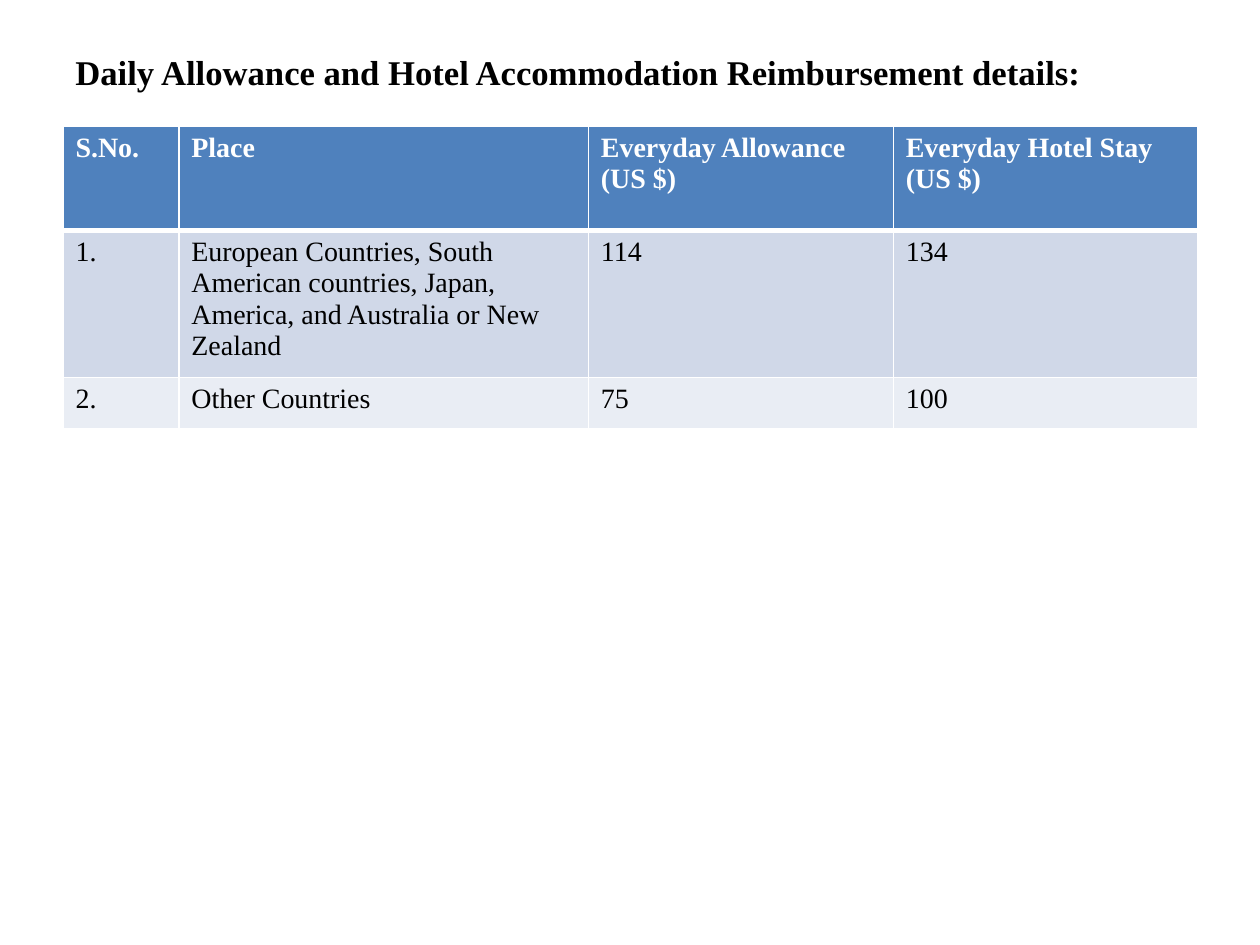
from lxml.etree import SubElement
from pptx import Presentation
from pptx.dml.color import RGBColor
from pptx.enum.text import MSO_ANCHOR
from pptx.oxml.ns import qn
from pptx.util import Inches, Pt

FONT = "Times New Roman"
WHITE, BLACK = "FFFFFF", "000000"
ROW_FILLS = ["4F81BD", "D0D8E8", "E9EDF4"]
COLUMN_WIDTHS = [0.92, 3.25, 2.42, 2.42]
ROW_HEIGHTS = [0.83, 1.08, 0.41]
ALLOWANCES = [
    ["S.No.", "Place", "Everyday Allowance (US $)", "Everyday Hotel Stay (US $)"],
    ["1.", "European Countries, South American countries, Japan, America, "
           "and Australia or New Zealand", "114", "134"],
    ["2.", "Other Countries", "75", "100"],
]


def color(value):
    return RGBColor.from_string(value)


def add_run(paragraph, text, size, text_color, bold):
    run = paragraph.add_run()
    run.text = text
    run.font.name = FONT
    run.font.size = Pt(size)
    run.font.bold = bold
    run.font.color.rgb = color(text_color)


def add_title(slide, text):
    title = slide.shapes.add_textbox(Inches(0.5), Inches(0.3), Inches(9), Inches(0.53))
    frame = title.text_frame
    frame.word_wrap = True
    frame.vertical_anchor = MSO_ANCHOR.MIDDLE
    add_run(frame.paragraphs[0], text, 19.8, BLACK, True)


def set_borders(cell, bottom_width):
    properties = cell._tc.get_or_add_tcPr()
    widths = {"a:lnL": 1, "a:lnR": 1, "a:lnT": 1, "a:lnB": bottom_width}
    for position, (side, width) in enumerate(widths.items()):
        line = SubElement(properties, qn(side), w=str(Pt(width)))
        fill = SubElement(line, qn("a:solidFill"))
        SubElement(fill, qn("a:srgbClr"), val=WHITE)
        properties.insert(position, line)


def add_allowance_table(slide):
    table = slide.shapes.add_table(
        len(ROW_HEIGHTS), len(COLUMN_WIDTHS),
        Inches(0.5), Inches(1), Inches(9), Inches(sum(ROW_HEIGHTS)),
    ).table
    for column, width in zip(table.columns, COLUMN_WIDTHS):
        column.width = Inches(width)
    for index, (row, height) in enumerate(zip(table.rows, ROW_HEIGHTS)):
        row.height = Inches(height)
        header = index == 0
        for cell, text in zip(row.cells, ALLOWANCES[index]):
            cell.fill.solid()
            cell.fill.fore_color.rgb = color(ROW_FILLS[index])
            set_borders(cell, 3 if header else 1)
            add_run(cell.text_frame.paragraphs[0], text, 16,
                    WHITE if header else BLACK, header)


def main():
    presentation = Presentation()
    presentation.slide_width = Inches(10)
    presentation.slide_height = Inches(7.5)
    slide = presentation.slides.add_slide(presentation.slide_layouts[6])
    add_title(slide, "Daily Allowance and Hotel Accommodation Reimbursement details:")
    add_allowance_table(slide)
    presentation.save("out.pptx")


if __name__ == "__main__":
    main()
